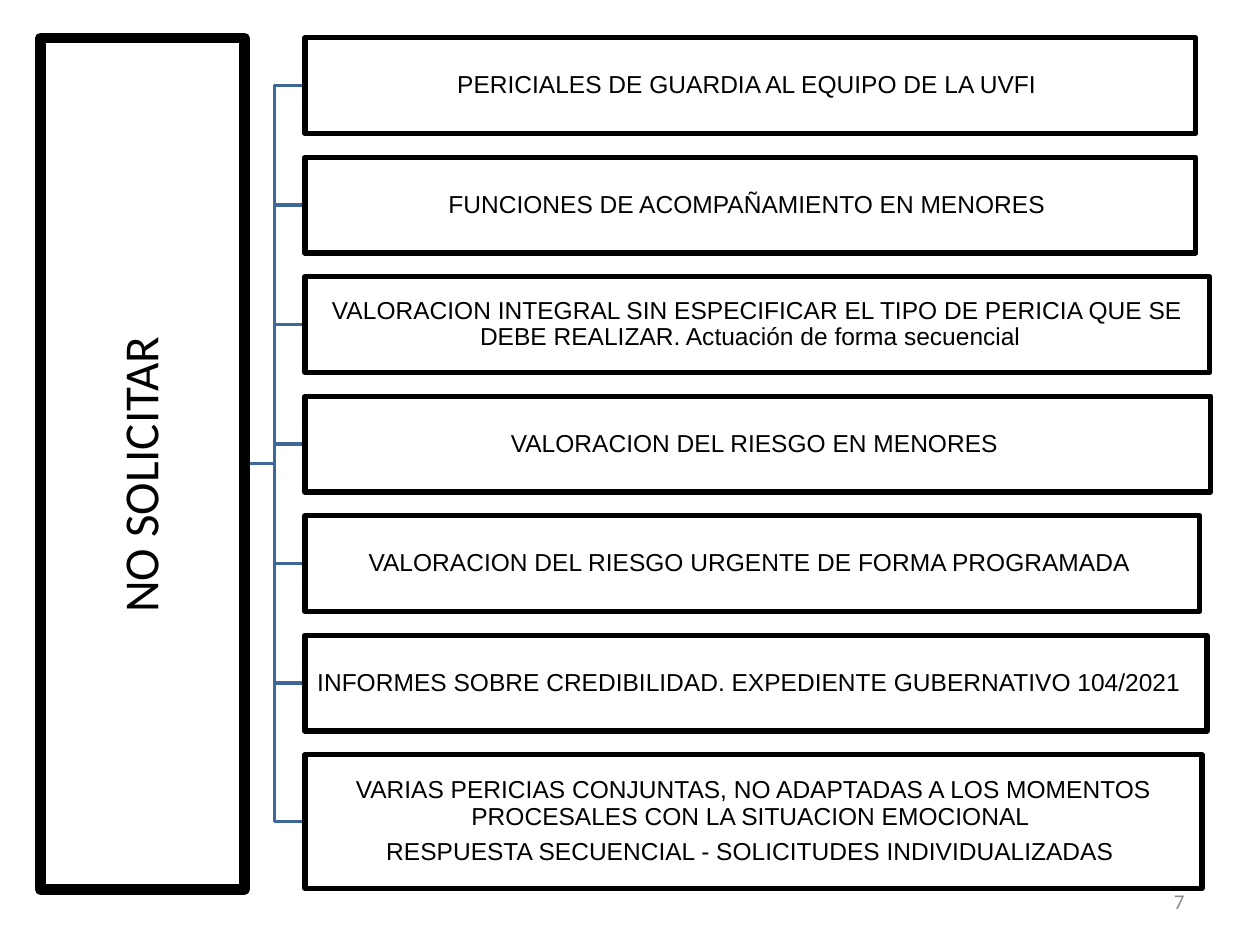
from pptx import Presentation
from pptx.dml.color import RGBColor
from pptx.enum.shapes import MSO_SHAPE
from pptx.enum.text import MSO_ANCHOR, PP_ALIGN
from pptx.util import Inches, Pt

BLACK, BLUE, GREY = "000000", "3F6797", "8C8C8C"

# Width of each box and its paragraphs
ITEMS = [
    (7.07, ["PERICIALES DE GUARDIA AL EQUIPO DE LA UVFI "]),
    (7.07, ["FUNCIONES DE ACOMPAÑAMIENTO EN MENORES "]),
    (7.18, ["VALORACION INTEGRAL SIN ESPECIFICAR EL TIPO DE PERICIA QUE SE "
            "DEBE REALIZAR. Actuación de forma secuencial  "]),
    (7.19, ["VALORACION DEL RIESGO EN MENORES "]),
    (7.10, ["VALORACION DEL RIESGO URGENTE DE FORMA PROGRAMADA "]),
    (7.16, ["INFORMES SOBRE CREDIBILIDAD. EXPEDIENTE GUBERNATIVO 104/2021  "]),
    (7.12, ["VARIAS PERICIAS CONJUNTAS, NO ADAPTADAS A LOS MOMENTOS "
            "PROCESALES CON LA SITUACION EMOCIONAL ",
            "RESPUESTA SECUENCIAL - SOLICITUDES INDIVIDUALIZADAS "]),
]
LEFT, TOP, HIGH, LAST = 2.42, 0.3, 0.76, 1.06
STEP = (5.99 - TOP) / (len(ITEMS) - 1)
ROOT_X, ROOT_Y = 1.94, 3.68


def color(code):
    return RGBColor.from_string(code)


def write(shape, lines, font, size, ink, align, pad=None):
    frame = shape.text_frame
    frame.word_wrap = True
    frame.vertical_anchor = MSO_ANCHOR.MIDDLE
    if pad is not None:
        frame.margin_left = frame.margin_right = Inches(pad)
        frame.margin_top = frame.margin_bottom = Inches(pad)
    frame.text = "\n".join(lines)
    for para in frame.paragraphs:
        para.alignment = align
        for run in para.runs:
            run.font.name = font
            run.font.size = Pt(size)
            run.font.color.rgb = color(ink)


def outline(shape, ink, width):
    shape.shadow.inherit = False
    shape.fill.background()
    shape.line.color.rgb = color(ink)
    shape.line.width = Pt(width)


def add_box(slide, place, lines, font, size, width, pad):
    box = slide.shapes.add_shape(MSO_SHAPE.RECTANGLE, *map(Inches, place))
    outline(box, BLACK, width)
    write(box, lines, font, size, BLACK, PP_ALIGN.CENTER, pad)
    for para in box.text_frame.paragraphs:
        para.line_spacing = 0.9
        para.space_after = Pt(round(size * 0.35))
    return box


def add_branch(slide, y):
    mid = (ROOT_X + LEFT) / 2
    path = slide.shapes.build_freeform(Inches(ROOT_X), Inches(ROOT_Y))
    points = [(mid, ROOT_Y), (mid, y), (LEFT, y)]
    path.add_line_segments([(Inches(a), Inches(b)) for a, b in points],
                           close=False)
    outline(path.convert_to_shape(), BLUE, 2)


def add_number(slide, text):
    box = slide.shapes.add_textbox(*map(Inches, (7.17, 6.95, 2.33, 0.4)))
    write(box, [text], "Calibri", 12, GREY, PP_ALIGN.RIGHT)


def main():
    deck = Presentation()
    deck.slide_width, deck.slide_height = Inches(10), Inches(7.5)
    slide = deck.slides.add_slide(deck.slide_layouts[6])
    add_number(slide, "7")

    # Rows: all the same height, except the last
    rows = []
    for i, (wide, lines) in enumerate(ITEMS):
        high = LAST if i == len(ITEMS) - 1 else HIGH
        rows.append((TOP + i * STEP, wide, high, lines))

    # Branches lie behind the boxes
    for top, wide, high, lines in reversed(rows):
        add_branch(slide, top + high / 2)

    # Upright heading
    head = add_box(slide, (-2.25, 2.87, 6.76, 1.62), ["NO SOLICITAR  "],
                   "Calibri", 28, 6, 0.02)
    head.rotation = 270

    # Boxes of the list
    for top, wide, high, lines in rows:
        add_box(slide, (LEFT, top, wide, high), lines, "Arial", 14, 3, 0.01)

    deck.save("out.pptx")


if __name__ == "__main__":
    main()
